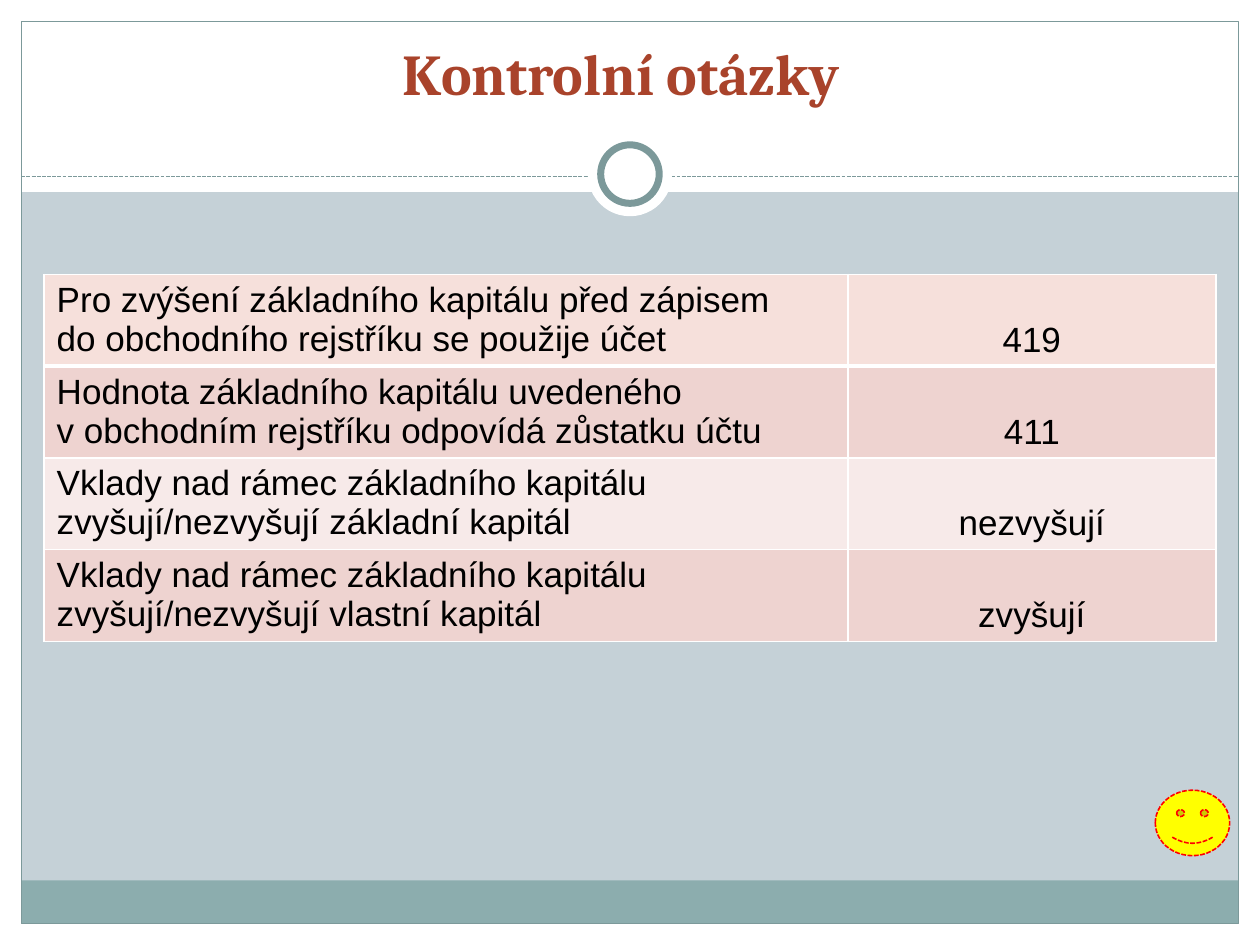
"""Build the slide of control questions on share capital."""
from lxml.etree import SubElement
from pptx import Presentation
from pptx.dml.color import RGBColor
from pptx.enum.dml import MSO_LINE
from pptx.enum.shapes import MSO_CONNECTOR, MSO_SHAPE
from pptx.enum.text import MSO_ANCHOR, PP_ALIGN
from pptx.oxml.ns import qn
from pptx.util import Cm, Pt

WHITE = RGBColor(0xFF, 0xFF, 0xFF)
BLACK = RGBColor(0, 0, 0)
BACKGROUND = RGBColor(0xC5, 0xD1, 0xD7)
TEAL = RGBColor(0x8C, 0xAD, 0xAE)
DARK_TEAL = RGBColor(0x7C, 0x99, 0x9A)
RUST = RGBColor(0xA9, 0x43, 0x2B)
YELLOW = RGBColor(0xFF, 0xFF, 0)
RED = RGBColor(0xFF, 0, 0)
FIRST_ROW = RGBColor(0xF6, 0xE0, 0xDB)
DARK_ROW = RGBColor(0xEE, 0xD3, 0xD0)
LIGHT_ROW = RGBColor(0xF7, 0xEA, 0xE9)

TITLE = "Kontrolní otázky"
QUESTIONS = [
    (["Pro zvýšení základního kapitálu před zápisem",
      "do obchodního rejstříku se použije účet"], "419", FIRST_ROW),
    (["Hodnota základního kapitálu uvedeného",
      "v obchodním rejstříku odpovídá zůstatku účtu"], "411", DARK_ROW),
    (["Vklady nad rámec základního kapitálu zvyšují/nezvyšují základní kapitál"],
     "nezvyšují", LIGHT_ROW),
    (["Vklady nad rámec základního kapitálu zvyšují/nezvyšují vlastní kapitál"],
     "zvyšují", DARK_ROW),
]

WIDTH, HEIGHT, MARGIN = 25.4, 19.05, 0.43
RULE_TOP = 3.56
RING_CENTER = 3.51
COLUMNS = (16.2, 7.42)
ROW_HEIGHT = 1.85
BANDS = [
    (0, HEIGHT - MARGIN, WIDTH, MARGIN, WHITE),
    (0, 0, WIDTH, 3.87, WHITE),
    (0, 0, MARGIN, HEIGHT, WHITE),
    (WIDTH - MARGIN, 0, MARGIN, HEIGHT, WHITE),
    (MARGIN, 17.75, WIDTH - 2 * MARGIN, 0.87, TEAL),
]


def add_shape(slide, kind, left, top, width, height, fill=None, line=None, weight=0.75):
    shape = slide.shapes.add_shape(kind, Cm(left), Cm(top), Cm(width), Cm(height))
    shape.shadow.inherit = False
    if fill is None:
        shape.fill.background()
    else:
        shape.fill.solid()
        shape.fill.fore_color.rgb = fill
    if line is None:
        shape.line.fill.background()
    else:
        shape.line.color.rgb = line
        shape.line.width = Pt(weight)
    return shape


def add_circle(slide, diameter, line=None):
    add_shape(slide, MSO_SHAPE.OVAL, (WIDTH - diameter) / 2, RING_CENTER - diameter / 2,
              diameter, diameter, WHITE, line, 4)


def add_text(paragraph, text, font, size, color, bold=False):
    run = paragraph.add_run()
    run.text = text
    run.font.name = font
    run.font.size = Pt(size)
    run.font.bold = bold
    run.font.color.rgb = color


def set_borders(cell, bottom):
    properties = cell._tc.get_or_add_tcPr()
    for index, (side, points) in enumerate((("L", 1), ("R", 1), ("T", 1), ("B", bottom))):
        border = properties.makeelement(qn(f"a:ln{side}"), {"w": str(Pt(points))})
        color = SubElement(SubElement(border, qn("a:solidFill")), qn("a:srgbClr"))
        color.set("val", str(WHITE))
        properties.insert(index, border)


def fill_cell(cell, lines, fill, alignment, anchor, bottom):
    cell.fill.solid()
    cell.fill.fore_color.rgb = fill
    cell.vertical_anchor = anchor
    for index, line in enumerate(lines):
        frame = cell.text_frame
        paragraph = frame.add_paragraph() if index else frame.paragraphs[0]
        paragraph.alignment = alignment
        add_text(paragraph, line, "Arial", 20, BLACK)
    set_borders(cell, bottom)


def add_frame(slide):
    for left, top, width, height, color in BANDS:
        add_shape(slide, MSO_SHAPE.RECTANGLE, left, top, width, height, color)
    add_shape(slide, MSO_SHAPE.RECTANGLE, MARGIN, MARGIN,
              WIDTH - 2 * MARGIN, HEIGHT - 2 * MARGIN, line=DARK_TEAL)
    rule = slide.shapes.add_connector(MSO_CONNECTOR.STRAIGHT, Cm(MARGIN), Cm(RULE_TOP),
                                      Cm(WIDTH - MARGIN), Cm(RULE_TOP))
    rule.line.color.rgb = DARK_TEAL
    rule.line.width = Pt(0.75)
    rule.line.dash_style = MSO_LINE.SQUARE_DOT
    SubElement(rule._element.spPr, qn("a:effectLst"))
    add_circle(slide, 1.7)
    add_circle(slide, 1.18, DARK_TEAL)


def add_title(slide):
    title = slide.shapes.title
    title.left, title.top, title.width, title.height = Cm(1.09), Cm(-0.81), Cm(22.86), Cm(3.1)
    title.text_frame.vertical_anchor = MSO_ANCHOR.BOTTOM
    paragraph = title.text_frame.paragraphs[0]
    paragraph.alignment = PP_ALIGN.CENTER
    add_text(paragraph, TITLE, "Cambria", 33, RUST, True)
    slide.shapes._spTree.append(title._element)


def add_questions(slide):
    table = slide.shapes.add_table(len(QUESTIONS), len(COLUMNS), Cm(0.89), Cm(5.53),
                                   Cm(sum(COLUMNS)), Cm(ROW_HEIGHT * len(QUESTIONS))).table
    table.first_row = table.horz_banding = False
    for column, width in zip(table.columns, COLUMNS):
        column.width = Cm(width)
    for index, (question, answer, fill) in enumerate(QUESTIONS):
        bottom = 1 if index else 3
        fill_cell(table.cell(index, 0), question, fill, PP_ALIGN.LEFT, MSO_ANCHOR.TOP, bottom)
        fill_cell(table.cell(index, 1), [answer], fill, PP_ALIGN.CENTER, MSO_ANCHOR.BOTTOM, bottom)


def main():
    presentation = Presentation()
    presentation.slide_width, presentation.slide_height = Cm(WIDTH), Cm(HEIGHT)
    slide = presentation.slides.add_slide(presentation.slide_layouts[5])
    slide.background.fill.solid()
    slide.background.fill.fore_color.rgb = BACKGROUND
    add_frame(slide)
    add_title(slide)
    add_questions(slide)
    smiley = add_shape(slide, MSO_SHAPE.SMILEY_FACE, 23.29, 15.93, 1.5, 1.32, YELLOW, RED, 0.9)
    smiley.line.dash_style = MSO_LINE.SQUARE_DOT
    presentation.save("out.pptx")


if __name__ == "__main__":
    main()
